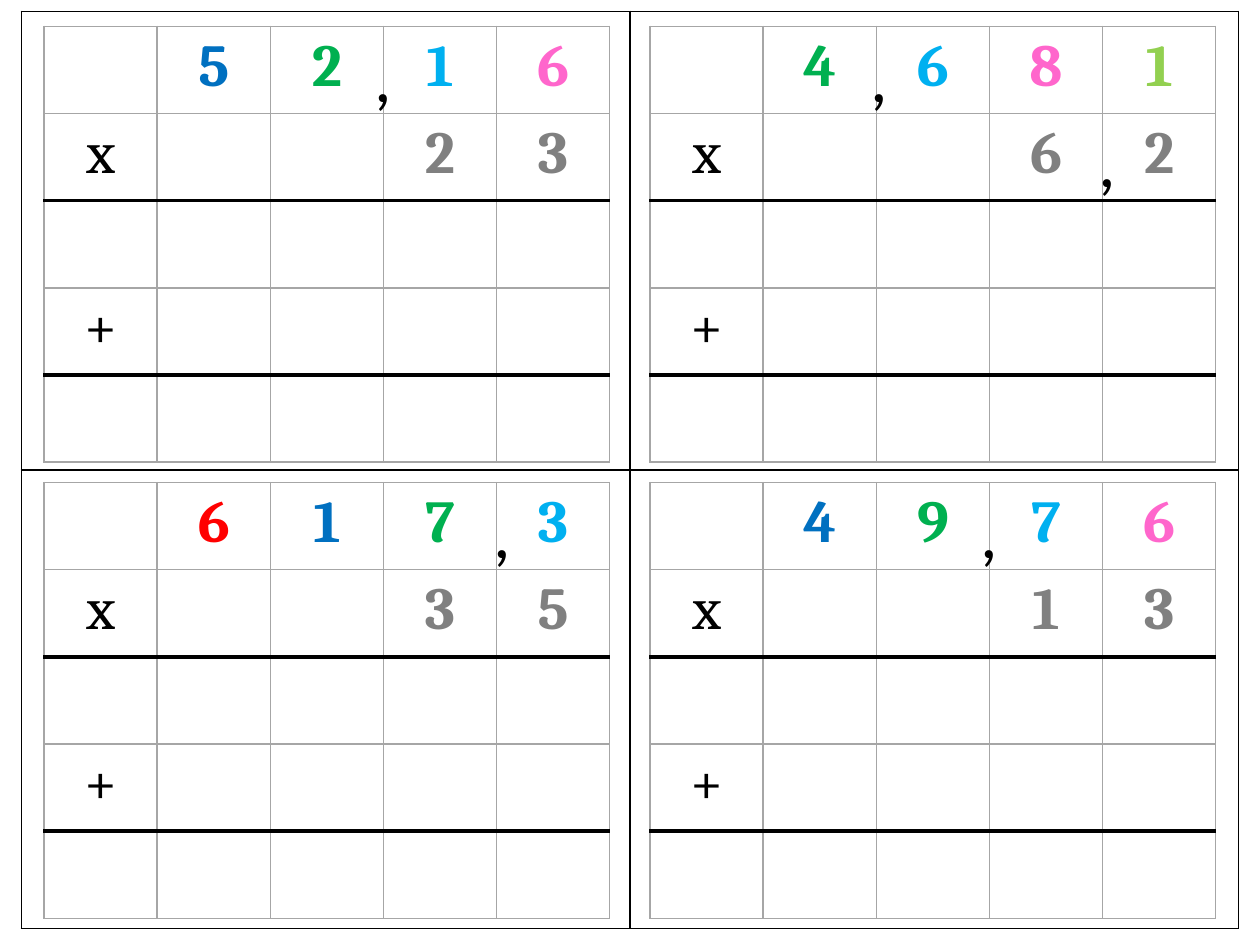
from lxml import etree
from pptx import Presentation
from pptx import util as u
from pptx.dml.color import RGBColor
from pptx.enum import text
from pptx.oxml import ns

WHITE = RGBColor(0xFF, 0xFF, 0xFF)
BLACK = RGBColor(0x00, 0x00, 0x00)
GRID = RGBColor(0xA6, 0xA6, 0xA6)
GRAY = RGBColor(0x80, 0x80, 0x80)
RED = RGBColor(0xFF, 0x00, 0x00)
BLUE = RGBColor(0x00, 0x70, 0xC0)
GREEN = RGBColor(0x00, 0xB0, 0x50)
SKY = RGBColor(0x00, 0xB0, 0xF0)
PINK = RGBColor(0xFF, 0x66, 0xCC)
LIME = RGBColor(0x92, 0xD0, 0x50)

# Place values from thousands down to thousandths
PLACE_COLORS = [RED, BLUE, GREEN, SKY, PINK, LIME]
THIN = (GRID, 1)
THICK = (BLACK, 2.25)
FRAME = (BLACK, 1)


def set_borders(cell, left, right, top, bottom):
    properties = cell._tc.get_or_add_tcPr()
    sides = {"L": left, "R": right, "T": top, "B": bottom}
    for side, (color, width) in sides.items():
        line = etree.SubElement(properties, ns.qn(f"a:ln{side}"), w=str(u.Pt(width)))
        fill = etree.SubElement(line, ns.qn("a:solidFill"))
        etree.SubElement(fill, ns.qn("a:srgbClr"), val=str(color))


def add_plain_table(page, rows, columns, left, top, width, height):
    table = page.shapes.add_table(
        rows, columns, u.Inches(left), u.Inches(top), u.Inches(width), u.Inches(height)
    ).table
    table.first_row = False
    table.horz_banding = False
    for cell in table.iter_cells():
        cell.fill.solid()
        cell.fill.fore_color.rgb = WHITE
    return table


deck = Presentation()
deck.slide_width = u.Inches(10)
deck.slide_height = u.Inches(7.5)
page = deck.slides.add_slide(deck.slide_layouts[6])

# Frame with four panels
frame = add_plain_table(page, 2, 2, 0.17, 0.09, 9.66, 7.28)
for cell in frame.iter_cells():
    cell.fill.background()
    set_borders(cell, FRAME, FRAME, FRAME, FRAME)
    cell.fill.solid()
    cell.fill.fore_color.rgb = WHITE

# Multiplication grids: left, top, upper digits, first place value, lower digits
problems = [
    (0.35, 0.21, "5216", 1, "23"),
    (5.16, 0.21, "4681", 2, "62"),
    (0.35, 3.83, "6173", 0, "35"),
    (5.16, 3.83, "4976", 1, "13"),
]
for left, top, upper, place, lower in problems:
    grid = add_plain_table(page, 5, 5, left, top, 4.49, 3.46)
    for row in range(5):
        for column in range(5):
            set_borders(
                grid.cell(row, column), THIN, THIN,
                THICK if row in (2, 4) else THIN,
                THICK if row in (1, 3) else THIN,
            )

    # Row, column, symbol, colour, bold
    entries = [(1, 0, "x", BLACK, False), (3, 0, "+", BLACK, False)]
    for index, digit in enumerate(upper):
        entries.append((0, index + 1, digit, PLACE_COLORS[place + index], True))
    for index, digit in enumerate(lower):
        entries.append((1, index + 3, digit, GRAY, True))
    for row, column, symbol, color, bold in entries:
        para = grid.cell(row, column).text_frame.paragraphs[0]
        para.alignment = text.PP_ALIGN.CENTER
        span = para.add_run()
        span.text = symbol
        span.font.name = "Cambria"
        span.font.size = u.Pt(34)
        span.font.bold = bold
        span.font.color.rgb = color

    # Borders come before the fill in each cell's properties
    for cell in grid.iter_cells():
        cell.fill.background()
        cell.fill.solid()
        cell.fill.fore_color.rgb = WHITE

# Decimal commas
for left, top in [(8.62, 0.88), (6.81, 0.21), (2.87, 0.21), (7.68, 3.83), (3.82, 3.83)]:
    box = page.shapes.add_textbox(
        u.Inches(left), u.Inches(top), u.Inches(0.31), u.Inches(0.77)
    )
    box.text_frame.word_wrap = True
    box.text_frame.auto_size = text.MSO_AUTO_SIZE.SHAPE_TO_FIT_TEXT
    span = box.text_frame.paragraphs[0].add_run()
    span.text = ","
    span.font.name = "Calibri"
    span.font.size = u.Pt(40)
    span.font.color.rgb = BLACK

deck.save("out.pptx")
